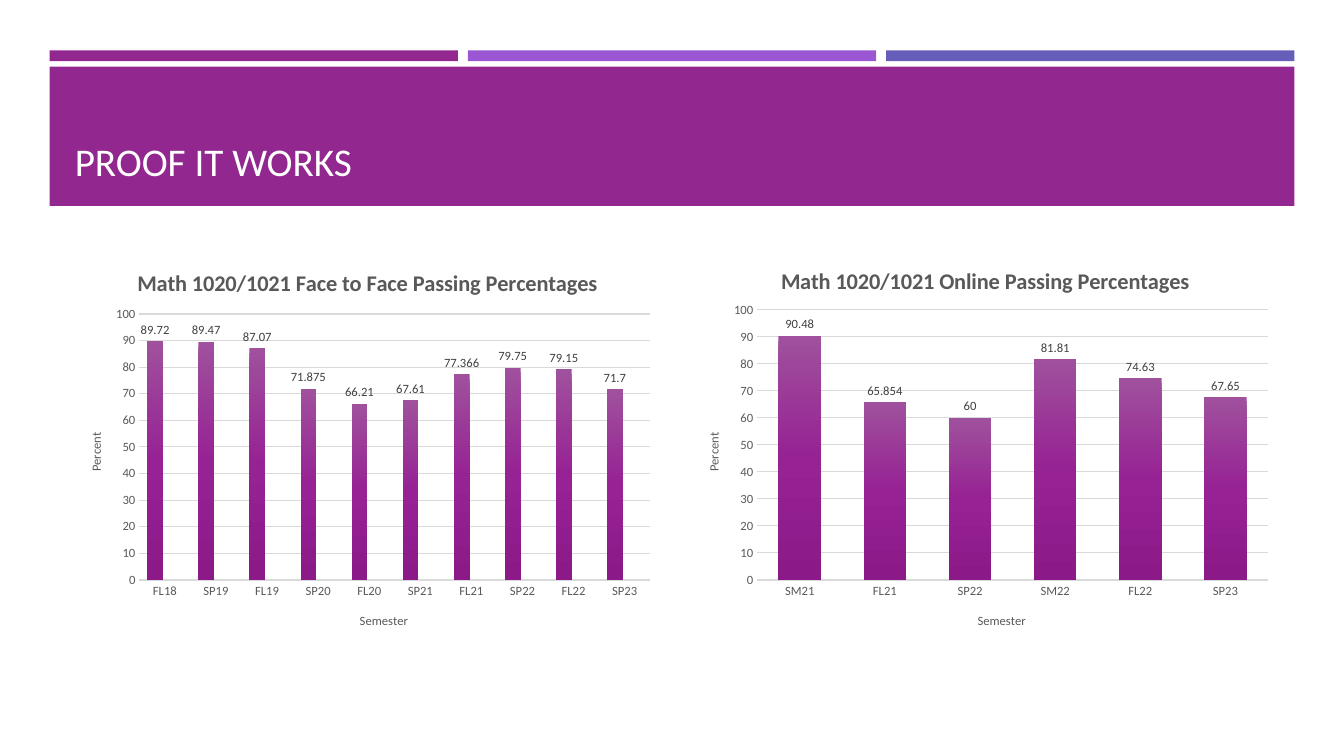
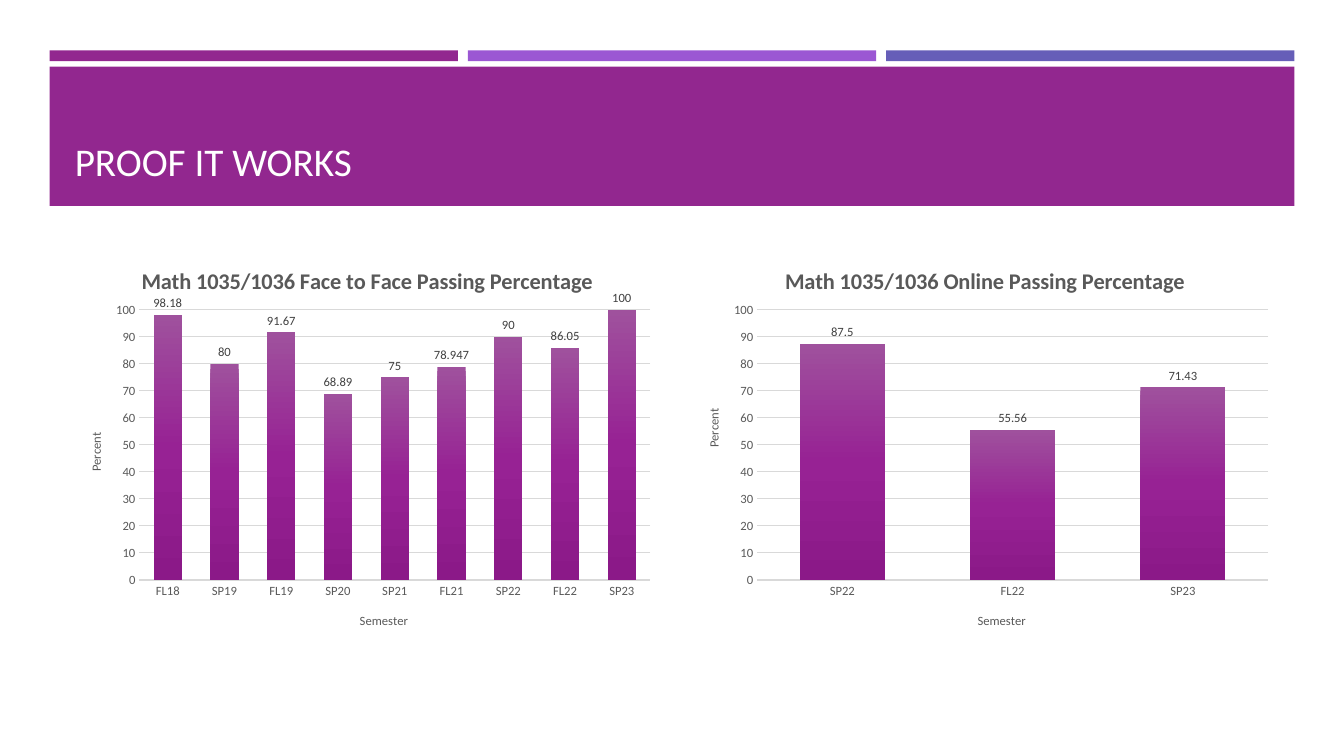
from copy import deepcopy

from pptx import Presentation
from pptx.chart.data import CategoryChartData
from pptx.dml.color import RGBColor
from pptx.enum.chart import XL_CHART_TYPE, XL_LABEL_POSITION, XL_TICK_MARK
from pptx.enum.shapes import MSO_SHAPE
from pptx.enum.text import MSO_ANCHOR, MSO_AUTO_SIZE, PP_ALIGN
from pptx.oxml import parse_xml
from pptx.oxml.ns import nsdecls, qn
from pptx.util import Cm, Pt

FONT = "Calibri"
PURPLE, VIOLET, BLUE = "92278F", "9B57D3", "665EB8"
WHITE, TEXT_GREY, LABEL_GREY, LINE_GREY = "FFFFFF", "595959", "404040", "D9D9D9"
SERIES_GRADIENTS = [
    [(0, "9F519D"), (0.5, "972294"), (1, "8B1988")],
    [(0, "A66ED9"), (0.5, "9C51D9"), (1, "8B41C8")],
]
LEFT_COLUMN, RIGHT_COLUMN = 1.63, 17.2


def color(hex_string):
    return RGBColor.from_string(hex_string)


def format_font(font, size, hex_string, bold=False):
    font.name = FONT
    font.size = Pt(size)
    font.bold = bold
    font.color.rgb = color(hex_string)


def write_text(text_frame, text, size=9, hex_string=TEXT_GREY, bold=False, align=None):
    text_frame.text = text
    paragraph = text_frame.paragraphs[0]
    paragraph.alignment = align
    format_font(paragraph.runs[0].font, size, hex_string, bold)


def place(element, index, inner=False, **fractions):
    """Fix a chart part at fractions (x, y, w, h) of the chart's size."""
    for layout in element.findall(qn("c:layout")):
        element.remove(layout)
    target = '<c:layoutTarget val="inner"/>' if inner else ""
    modes = '<c:xMode val="edge"/><c:yMode val="edge"/>'
    values = "".join(f'<c:{key} val="{value}"/>' for key, value in fractions.items())
    element.insert(index, parse_xml(
        f'<c:layout {nsdecls("c")}><c:manualLayout>{target}{modes}{values}'
        "</c:manualLayout></c:layout>"))


def fill_gradient(fill, stops):
    fill.gradient()
    fill.gradient_angle = 270
    last_stop = fill.gradient_stops[-1]._gs
    last_stop.addnext(deepcopy(last_stop))
    for stop, (position, hex_string) in zip(fill.gradient_stops, stops):
        stop.position = position
        stop.color.rgb = color(hex_string)


class Deck:
    def __init__(self):
        self.presentation = Presentation()
        self.presentation.slide_width = Cm(33.87)
        self.presentation.slide_height = Cm(19.05)
        self.layout = self.presentation.slide_layouts[5]
        self.slide = None

    def add_slide(self, title):
        first = self.slide is None
        self.slide = self.presentation.slides.add_slide(self.layout)
        if first:
            self.add_layout_bands()
        self.add_title(title)

    def add_layout_bands(self):
        """Draw the bands once and move them to the layout, behind every title."""
        left, width, pitch = 1.25, 10.29, 10.54
        bands = [self.add_band(left + number * pitch, 1.27, width, 0.27, fill)
                 for number, fill in enumerate((PURPLE, VIOLET, BLUE))]
        bands.append(self.add_band(left, 1.68, 2 * pitch + width, 3.51, PURPLE))
        for band in bands:
            self.layout.shapes._spTree.append(band._element)

    def add_band(self, left, top, width, height, fill):
        shape = self.slide.shapes.add_shape(
            MSO_SHAPE.RECTANGLE, Cm(left), Cm(top), Cm(width), Cm(height))
        shape.shadow.inherit = False
        shape.fill.solid()
        shape.fill.fore_color.rgb = color(fill)
        shape.line.fill.background()
        return shape

    def add_title(self, text):
        title = self.slide.shapes.title
        title.left, title.top = Cm(LEFT_COLUMN), Cm(2.03)
        title.width, title.height = Cm(30.63), Cm(2.74)
        text_frame = title.text_frame
        text_frame.word_wrap = True
        text_frame.auto_size = MSO_AUTO_SIZE.NONE
        text_frame.vertical_anchor = MSO_ANCHOR.BOTTOM
        write_text(text_frame, text, size=28, hex_string=WHITE, align=PP_ALIGN.LEFT)

    def add_column_chart(self, left, title, values, title_left, title_top=0.04,
                         plot_top=0.16, percent_top=0.46, empty_series=False):
        data = CategoryChartData()
        data.categories = list(values)
        data.add_series("Series 1", list(values.values()))
        if empty_series:
            data.add_series("Series 2", [None] * len(values))
        chart = self.slide.shapes.add_chart(
            XL_CHART_TYPE.COLUMN_CLUSTERED, Cm(left), Cm(6.2), Cm(15.06), Cm(10.08),
            data).chart
        format_font(chart.font, 10, "000000")
        chart.has_legend = False
        chart.has_title = True
        write_text(chart.chart_title.text_frame, title, size=16, bold=True)
        place(chart.chart_title._element, 1, x=title_left, y=title_top)
        place(chart._chartSpace.chart.plotArea, 0, inner=True,
              x=0.125, y=plot_top, w=0.855, h=round(0.835 - plot_top, 3))
        self.format_series(chart.plots[0])
        self.format_axis(chart.category_axis, "Semester", x=0.49, y=0.91)
        chart.category_axis.format.line.color.rgb = color(LINE_GREY)
        chart.category_axis.format.line.width = Pt(1)
        self.format_value_axis(chart.value_axis, percent_top)

    def format_series(self, plot):
        plot.vary_by_categories = False
        plot.gap_width = 100
        plot.overlap = -24
        for series, stops in zip(plot.series, SERIES_GRADIENTS):
            fill_gradient(series.format.fill, stops)
        labels = plot.series[0].data_labels
        labels.show_value = True
        labels.position = XL_LABEL_POSITION.OUTSIDE_END
        format_font(labels.font, 9, LABEL_GREY)

    def format_axis(self, axis, title, **position):
        axis.major_tick_mark = axis.minor_tick_mark = XL_TICK_MARK.NONE
        format_font(axis.tick_labels.font, 9, TEXT_GREY)
        write_text(axis.axis_title.text_frame, title)
        place(axis.axis_title._element, 1, **position)

    def format_value_axis(self, axis, title_top):
        self.format_axis(axis, "Percent", x=0.035, y=title_top)
        body = axis.axis_title.text_frame._txBody.bodyPr
        body.set("rot", "-5400000")
        body.set("vert", "horz")
        axis.minimum_scale, axis.maximum_scale, axis.major_unit = 0, 100, 10
        axis.format.line.fill.background()
        axis.has_major_gridlines = True
        axis.major_gridlines.format.line.color.rgb = color(LINE_GREY)
        axis.major_gridlines.format.line.width = Pt(0.75)

    def save(self):
        self.presentation.save("out.pptx")


def main():
    deck = Deck()
    deck.add_slide("PROOF IT WORKS")
    deck.add_column_chart(
        LEFT_COLUMN, "Math 1020/1021 Face to Face Passing Percentages",
        {"FL18": 89.72, "SP19": 89.47, "FL19": 87.07, "SP20": 71.875, "FL20": 66.21,
         "SP21": 67.61, "FL21": 77.366, "SP22": 79.75, "FL22": 79.15, "SP23": 71.7},
        title_left=0.115, title_top=0.045, plot_top=0.17, empty_series=True)
    deck.add_column_chart(
        RIGHT_COLUMN, "Math 1020/1021 Online Passing Percentages",
        {"SM21": 90.48, "FL21": 65.854, "SP22": 60, "SM22": 81.81, "FL22": 74.63,
         "SP23": 67.65},
        title_left=0.158)

    deck.add_slide("PROOF IT WORKS")
    deck.add_column_chart(
        RIGHT_COLUMN, "Math 1035/1036 Online Passing Percentage",
        {"SP22": 87.5, "FL22": 55.56, "SP23": 71.43},
        title_left=0.165, percent_top=0.4)
    deck.add_column_chart(
        LEFT_COLUMN, "Math 1035/1036 Face to Face Passing Percentage",
        {"FL18": 98.18, "SP19": 80, "FL19": 91.67, "SP20": 68.89, "SP21": 75,
         "FL21": 78.947, "SP22": 90, "FL22": 86.05, "SP23": 100},
        title_left=0.122)
    deck.save()


if __name__ == "__main__":
    main()
